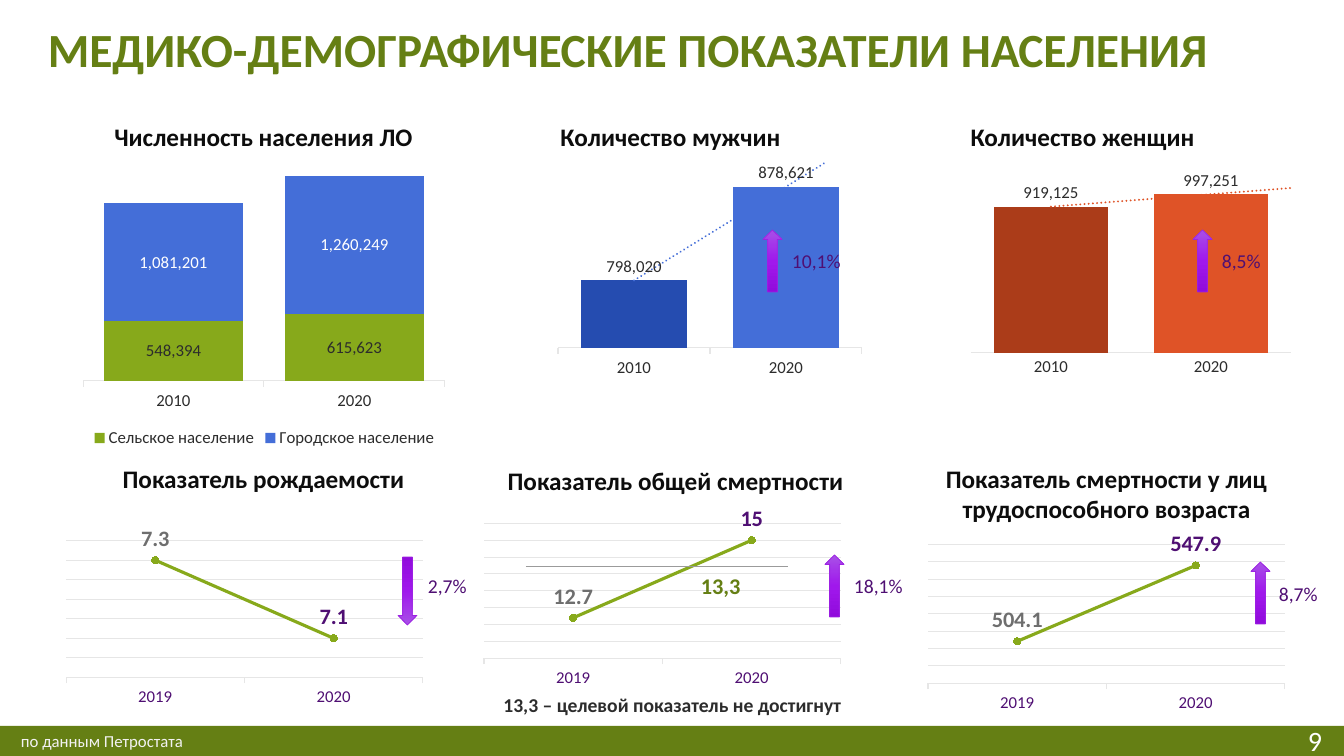
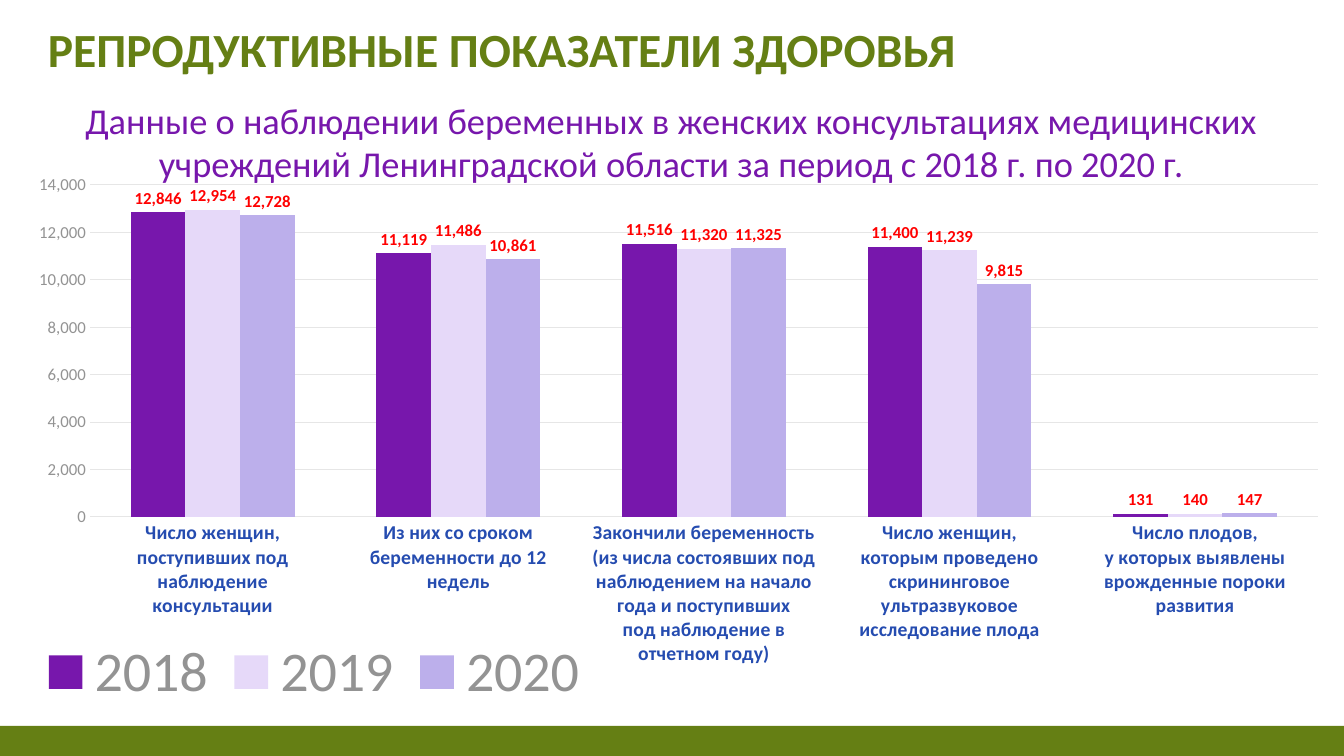
import lxml.etree
import pptx
import pptx.chart.data
import pptx.dml.color
import pptx.enum.chart
import pptx.enum.shapes
import pptx.enum.text
import pptx.oxml.ns
import pptx.util

# Shared look
PX = 914400 / 100.8
FONT = "Calibri"
GREEN, LIME, BLUE, NAVY = "657F14", "87A91B", "446ED8", "254CB0"
RED, RUST, PLUM, VIOLET = "DF5327", "AB3C19", "4F0F73", "7717AC"
INK, DARK, GRID, GRAY, WHITE = "0D0D0D", "2C2C2C", "E6E6E6", "939393", "FFFFFF"
ARROW = ("A850E7", "A018EC", "910BDC")
KIND = pptx.enum.chart.XL_CHART_TYPE
SPOT = pptx.enum.chart.XL_LABEL_POSITION
TICK = pptx.enum.chart.XL_TICK_MARK
ALIGN = pptx.enum.text.PP_ALIGN
ANCHOR = pptx.enum.text.MSO_ANCHOR
FORM = pptx.enum.shapes.MSO_SHAPE

# Content of slide 1: boxes and plots are (left, top, width, height) in px
HEADS = [
    ("Численность населения ЛО", (97, 116, 333, 40)),
    ("Количество мужчин", (504, 116, 333, 40)),
    ("Количество женщин", (916, 116, 333, 40)),
    ("Показатель рождаемости", (97, 458, 333, 40)),
    ("Показатель общей смертности", (483, 460, 385, 40)),
    ("Показатель смертности у лиц трудоспособного возраста", (914, 458, 385, 72)),
]
BARS = [
    dict(box=(76, 156, 377, 296), plot=(83, 163, 362, 218), kind=KIND.COLUMN_STACKED,
         span=(0, 2000000), gap=30, over=100, legend=12, spot=SPOT.CENTER,
         rows=[("Сельское население", (548394, 615623), LIME, DARK),
               ("Городское население", (1081201, 1260249), BLUE, WHITE)]),
    dict(box=(552, 156, 317, 226), plot=(558, 162, 304, 186), span=(740000, 900000),
         gap=43, over=-31, first=NAVY, trend=BLUE,
         rows=[("Мужчины", (798020, 878621), BLUE, DARK)]),
    dict(box=(965, 156, 333, 226), plot=(971, 162, 320, 191), span=(0, 1200000),
         gap=40, first=RUST, trend=RED, tick=TICK.NONE,
         rows=[("Женщины", (919125, 997251), RED, DARK)]),
]
LINES = [
    ("Рождаемость", (7.3, 7.1), (7, 7.35, 0.05), (58, 526), (66, 538, 357, 139)),
    ("Общая смертность", (12.7, 15), (11.5, 15.5, 0.5), (477, 506), (484, 521, 357, 137)),
    ("Смертность", (504.1, 547.9), (480, 560, 10), (921, 531), (928, 543, 357, 140)),
]
SHIFTS = [  # arrow box, direction, text, text place
    ((763, 230, 19, 62), "up", "10,1%", (782, 244)),
    ((1193, 230, 19, 62), "up", "8,5%", (1212, 244)),
    ((398, 557, 19, 68), "down", "2,7%", (418, 569)),
    ((825, 555, 19, 62), "up", "18,1%", (844, 569)),
    ((1251, 562, 19, 62), "up", "8,7%", (1269, 577)),
]

# Content of slide 2
CARE = "Данные о наблюдении беременных в женских консультациях медицинских учреждений Ленинградской области за период с 2018 г. по 2020 г."
GROUPS = [
    "Число женщин,\nпоступивших под наблюдение консультации",
    "Из них со сроком беременности до 12 недель",
    "Закончили беременность\n(из числа состоявших под наблюдением на начало года и поступивших\nпод наблюдение в отчетном году)",
    "Число женщин,\nкоторым проведено скрининговое ультразвуковое исследование плода",
    "Число плодов,\nу которых выявлены врожденные пороки развития",
]
YEARS = [
    ("2018", (12846, 11119, 11516, 11400, 131), VIOLET, "FF0000"),
    ("2019", (12954, 11486, 11320, 11239, 140), "E6D9F9", "FF0000"),
    ("2020", (12728, 10861, 11325, 9815, 147), "BCAFEB", "FF0000"),
]


def px(*nums):
    return [pptx.util.Emu(round(n * PX)) for n in nums]


def rgb(code):
    return pptx.dml.color.RGBColor.from_string(code)


def style(font, size, color, bold=False):
    font.name, font.size, font.bold = FONT, pptx.util.Pt(size), bold
    font.color.rgb = rgb(color)


def paint(line, color, width):
    line.color.rgb, line.width = rgb(color), pptx.util.Pt(width)


def node(host, tag, **attrs):
    return lxml.etree.SubElement(host, pptx.oxml.ns.qn(tag), attrs)


def write(slide, text, box, size, color, bold=False, align=ALIGN.LEFT,
          anchor=ANCHOR.TOP, wrap=True):
    frame = slide.shapes.add_textbox(*px(*box)).text_frame
    frame.word_wrap, frame.vertical_anchor = wrap, anchor
    para = frame.paragraphs[0]
    para.alignment = align
    run = para.add_run()
    run.text = text
    style(run.font, size, color, bold)


def start(deck, title):
    """Add a slide with the title and the bottom band."""
    slide = deck.slides.add_slide(deck.slide_layouts[6])
    band = slide.shapes.add_shape(FORM.RECTANGLE, *px(0, 726, 1344, 30))
    band.shadow.inherit = False
    band.fill.solid()
    band.fill.fore_color.rgb = rgb(GREEN)
    band.line.fill.background()
    write(slide, title, (38, 7, 1270, 75), 34, GREEN, True, anchor=ANCHOR.BOTTOM)
    return slide


def place(host, index, box, area, inner=False):
    """Fix a chart part at a px box inside the chart area."""
    for old in host.findall(pptx.oxml.ns.qn("c:layout")):
        host.remove(old)
    layout = node(host, "c:layout")
    host.insert(index, layout)
    manual = node(layout, "c:manualLayout")
    if inner:
        node(manual, "c:layoutTarget", val="inner")
    for key in "xy":
        node(manual, f"c:{key}Mode", val="edge")
    parts = ((box[0] - area[0]) / area[2], (box[1] - area[1]) / area[3],
             box[2] / area[2], box[3] / area[3])
    for key, part in zip("xywh", parts):
        node(manual, "c:" + key, val=f"{part:.4f}")


def draw(slide, kind, cats, rows, box, plot, span, color, fmt="#,##0", size=12,
         bold=False, grid=False, legend=None, tick=TICK.OUTSIDE):
    """Add a chart with the settings that all charts share."""
    data = pptx.chart.data.CategoryChartData(number_format=fmt)
    data.categories = cats
    for row in rows:
        data.add_series(row[0], row[1])
    chart = slide.shapes.add_chart(kind, *px(*box), data).chart
    chart.has_title = False
    style(chart.font, 10, color)
    chart.plots[0].vary_by_categories = False
    place(chart.element.xpath(".//c:plotArea")[0], 0, plot, box, True)
    axis, cat = chart.value_axis, chart.category_axis
    axis.minimum_scale, axis.maximum_scale = span[:2]
    if len(span) > 2:
        axis.major_unit = span[2]
    axis.has_major_gridlines = grid
    if grid:
        paint(axis.major_gridlines.format.line, GRID, 0.75)
    axis.visible = False
    cat.major_tick_mark = tick
    style(cat.tick_labels.font, size, color, bold)
    paint(cat.format.line, GRID, 0.75)
    chart.has_legend = legend is not None
    if legend:
        chart.legend.position = pptx.enum.chart.XL_LEGEND_POSITION.BOTTOM
        chart.legend.include_in_layout = False
        style(chart.legend.font, legend, color)
    return chart


def label(series, spot, size, color, bold=False, fmt="#,##0"):
    tags = series.data_labels
    tags.show_value, tags.position = True, spot
    tags.number_format, tags.number_format_is_linked = fmt, False
    style(tags.font, size, color, bold)


def fill(chart, rows, spot, bold=False):
    """Colour columns and their value labels."""
    for series, row in zip(chart.plots[0].series, rows):
        series.format.fill.solid()
        series.format.fill.fore_color.rgb = rgb(row[2])
        label(series, spot, 12, row[3], bold)


def trend(chart, color):
    """Add a dotted linear trend that runs half a step ahead."""
    ser = chart.element.xpath(".//c:ser")[0]
    curve = node(ser, "c:trendline")
    line = node(node(curve, "c:spPr"), "a:ln", w="19050", cap="rnd")
    node(node(line, "a:solidFill"), "a:srgbClr", val=color)
    node(line, "a:prstDash", val="sysDot")
    node(curve, "c:trendlineType", val="linear")
    node(curve, "c:forward", val="0.5")
    node(curve, "c:dispRSqr", val="0")
    node(curve, "c:dispEq", val="0")
    ser.xpath("c:cat")[0].addprevious(curve)


def column(slide, kind=KIND.COLUMN_CLUSTERED, gap=40, over=0, spot=SPOT.OUTSIDE_END,
           first=None, trend_color=None, **rest):
    chart = draw(slide, kind, ("2010", "2020"), color=DARK, **rest)
    chart.plots[0].gap_width, chart.plots[0].overlap = gap, over
    fill(chart, rest["rows"], spot)
    if first:
        point = chart.plots[0].series[0].points[0].format.fill
        point.solid()
        point.fore_color.rgb = rgb(first)
    if trend_color:
        trend(chart, trend_color)


def curve(slide, name, vals, span, at, plot):
    chart = draw(slide, KIND.LINE_MARKERS, ("2019", "2020"), [(name, vals)],
                 (*at, 372, 183), plot, span, PLUM, fmt="General", grid=True)
    series = chart.plots[0].series[0]
    series.smooth = False
    paint(series.format.line, LIME, 2.25)
    mark = series.marker
    mark.style, mark.size = pptx.enum.chart.XL_MARKER_STYLE.CIRCLE, 5
    mark.format.fill.solid()
    mark.format.fill.fore_color.rgb = rgb(LIME)
    paint(mark.format.line, LIME, 0.75)
    label(series, SPOT.ABOVE, 16, PLUM, True, "General")
    tag = series.points[0].data_label
    style(tag.font, 16, "6E6E6E", True)
    tag.position = SPOT.ABOVE


def arrow(slide, box, way):
    form = FORM.UP_ARROW if way == "up" else FORM.DOWN_ARROW
    shape = slide.shapes.add_shape(form, *px(*box))
    shape.shadow.inherit = False
    shape.fill.gradient()
    shape.fill.gradient_angle = 270 if way == "up" else 90
    stops = shape.element.xpath(".//a:gsLst")[0]
    for old in list(stops):
        stops.remove(old)
    for step, color in enumerate(ARROW):
        node(node(stops, "a:gs", pos=str(step * 50000)), "a:srgbClr", val=color)
    paint(shape.line, "9D22E2", 0.5)


def people(deck):
    slide = start(deck, "МЕДИКО-ДЕМОГРАФИЧЕСКИЕ ПОКАЗАТЕЛИ НАСЕЛЕНИЯ")
    write(slide, "9", (1246, 728, 86, 25), 20, WHITE, align=ALIGN.RIGHT,
          anchor=ANCHOR.MIDDLE)
    write(slide, "по данным Петростата", (11, 726, 203, 30), 12, "F2F2F2")
    for spec in BARS:
        parts = dict(spec)
        column(slide, trend_color=parts.pop("trend", None), **parts)
    for row in LINES:
        curve(slide, *row)
    for text, box in HEADS:
        write(slide, text, box, 18, INK, True, ALIGN.CENTER)
    for box, way, text, at in SHIFTS:
        arrow(slide, box, way)
        write(slide, text, (*at, 79, 34), 14, PLUM)
    # Target level of mortality
    goal = slide.shapes.add_connector(pptx.enum.shapes.MSO_CONNECTOR.STRAIGHT,
                                      *px(526, 566, 788, 566))
    paint(goal.line, "9B9B9B", 0.5)
    node(goal.element.spPr, "a:effectLst")
    write(slide, "13,3", (691, 567, 60, 37), 16, GREEN, True, wrap=False)
    write(slide, "13,3 – целевой показатель не достигнут", (490, 688, 365, 34),
          14, DARK, True, ALIGN.CENTER)


def births(deck):
    slide = start(deck, "РЕПРОДУКТИВНЫЕ ПОКАЗАТЕЛИ ЗДОРОВЬЯ")
    area = (10, 175, 1326, 554)
    chart = draw(slide, KIND.COLUMN_CLUSTERED, GROUPS, YEARS, area,
                 (90, 185, 1228, 332), (0, 14000, 2000), NAVY, size=14, bold=True,
                 grid=True, legend=40, tick=TICK.NONE)
    chart.plots[0].gap_width, chart.plots[0].overlap = 150, 0
    fill(chart, YEARS, SPOT.OUTSIDE_END, True)
    chart.category_axis.format.line.fill.background()
    axis = chart.value_axis
    axis.visible, axis.major_tick_mark = True, TICK.NONE
    axis.format.line.fill.background()
    axis.tick_labels.number_format = "#,##0"
    axis.tick_labels.number_format_is_linked = False
    style(axis.tick_labels.font, 12, GRAY)
    style(chart.legend.font, 40, GRAY)
    place(chart.element.xpath(".//c:legend")[0], 1, (22, 644, 584, 68), area)
    write(slide, CARE, (22, 93, 1300, 98), 26, VIOLET, align=ALIGN.CENTER)


def main():
    deck = pptx.Presentation()
    deck.slide_width, deck.slide_height = px(1344, 756)
    people(deck)
    births(deck)
    deck.save("out.pptx")


if __name__ == "__main__":
    main()
